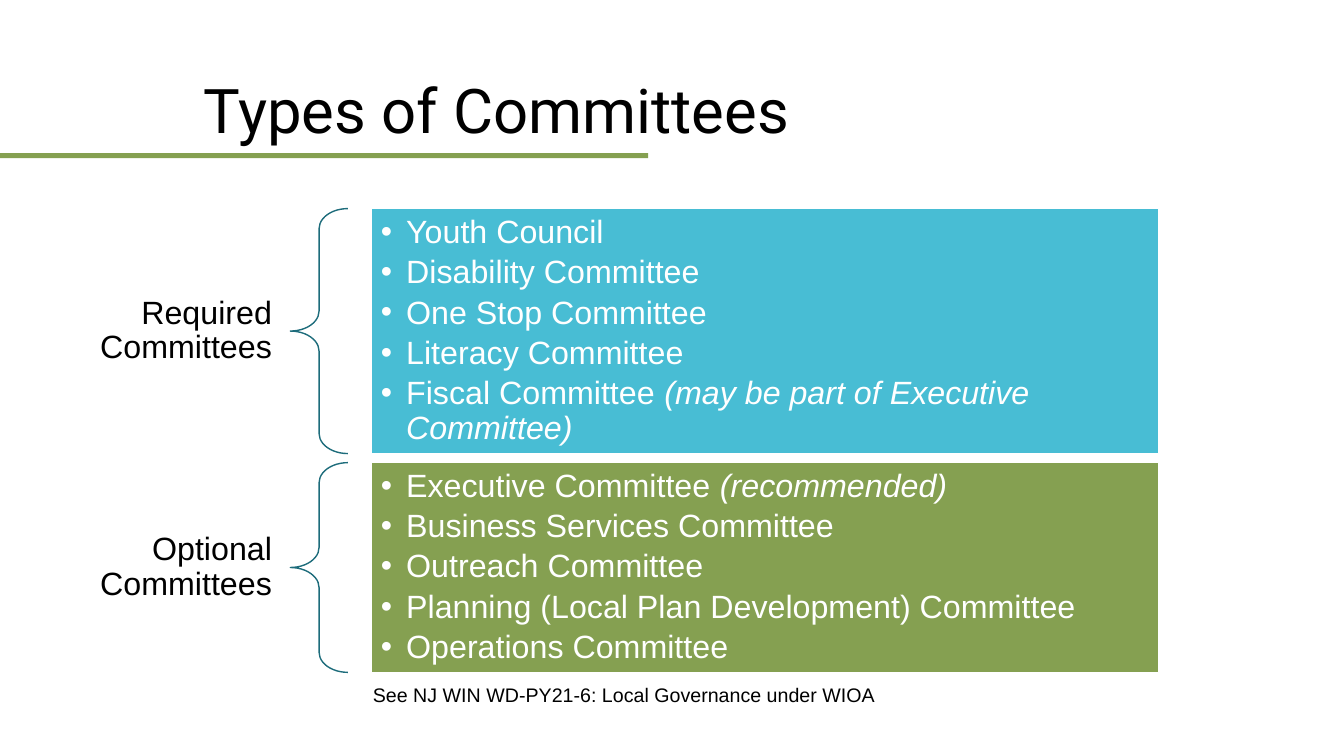
from pptx import Presentation
from pptx.dml.color import RGBColor as RGB
from pptx.enum.shapes import MSO_SHAPE as Shape
from pptx.enum.text import MSO_ANCHOR as Anchor, PP_ALIGN as Align
from pptx.oxml.ns import qn
from pptx.util import Inches, Pt
from lxml.etree import SubElement as Sub

BLACK, WHITE = "000000", "FFFFFF"
BLUE, GREEN, TEAL = "48BDD4", "85A051", "1D6C7B"

# label, top, height, fill, (committee, note in italics)
GROUPS = [
    ("Required Committees", 2.07, 2.43, BLUE, [
        ("Youth Council", ""),
        ("Disability Committee", ""),
        ("One Stop Committee", ""),
        ("Literacy Committee", ""),
        ("Fiscal Committee ", "(may be part of Executive Committee)"),
    ]),
    ("Optional Committees", 4.59, 2.08, GREEN, [
        ("Executive Committee ", "(recommended)"),
        ("Business Services Committee", ""),
        ("Outreach Committee", ""),
        ("Planning (Local Plan Development) Committee", ""),
        ("Operations Committee", ""),
    ]),
]


def color(code):
    return RGB.from_string(code)


def add_bullet(para):
    props = para._p.get_or_add_pPr()
    props.set("marL", str(Inches(0.25)))
    props.set("indent", str(-Inches(0.25)))
    Sub(props, qn("a:buFont"), typeface="Arial")
    Sub(props, qn("a:buChar"), char="•")


def write(frame, lines, size=23, font="Arial", ink=BLACK, align=Align.LEFT,
          anchor=Anchor.MIDDLE, pad=(0.1, 0.05), after=0, bullet=False):
    """Fill a text frame with lines of (text, italic note)."""
    frame.word_wrap = True
    frame.vertical_anchor = anchor
    frame.margin_left = frame.margin_right = Inches(pad[0])
    frame.margin_top = frame.margin_bottom = Inches(pad[1])
    for i, (text, note) in enumerate(lines):
        para = frame.add_paragraph() if i else frame.paragraphs[0]
        para.alignment = align
        para.line_spacing = 0.9
        para.space_before = Pt(0)
        para.space_after = Pt(after)
        if bullet:
            add_bullet(para)
        for part, slant in ((text, False), (note, True)):
            if part:
                run = para.add_run()
                run.text = part
                run.font.name = font
                run.font.size = Pt(size)
                run.font.italic = slant
                run.font.color.rgb = color(ink)


def add_text(slide, box, text, **style):
    area = slide.shapes.add_textbox(*map(Inches, box))
    write(area.text_frame, [(text, "")], **style)


def add_form(slide, kind, box, fill=None, line=None):
    form = slide.shapes.add_shape(kind, *map(Inches, box))
    form.shadow.inherit = False
    if fill:
        form.fill.solid()
        form.fill.fore_color.rgb = color(fill)
    else:
        form.fill.background()
    if line:
        form.line.color.rgb = color(line)
        form.line.width = Pt(1)
    else:
        form.line.fill.background()
    return form


def add_group(slide, label, top, high, fill, items):
    # Label, centred on its brace
    add_text(slide, (0.01, top + (high - 0.79) / 2, 2.87, 0.79), label,
             align=Align.RIGHT, pad=(0.18, 0.06))
    brace = add_form(slide, Shape.LEFT_BRACE, (2.88, top, 0.57, high),
                     line=TEAL)
    brace.adjustments[0] = 0.35
    brace.adjustments[1] = 0.5
    # Panel with the list
    panel = add_form(slide, Shape.RECTANGLE, (3.68, top, 7.81, high),
                     fill=fill, line=WHITE)
    write(panel.text_frame, items, ink=WHITE, pad=(0.1, 0.1), after=4,
          bullet=True)


def main():
    deck = Presentation()
    deck.slide_width, deck.slide_height = Inches(13.33), Inches(7.5)
    slide = deck.slides.add_slide(deck.slide_layouts[6])

    # Title and its rule
    add_form(slide, Shape.RECTANGLE, (0, 1.52, 6.43, 0.05), fill=GREEN)
    add_text(slide, (1.92, 0.4, 10.5, 1.45), "Types of Committees",
             size=44, font="Roboto")

    # Committee groups
    for group in GROUPS:
        add_group(slide, *group)

    # Reference line
    add_text(slide, (3.6, 6.75, 8.6, 0.31),
             "See NJ WIN WD-PY21-6: Local Governance under WIOA",
             size=14, anchor=Anchor.TOP)

    deck.save("out.pptx")


if __name__ == "__main__":
    main()
